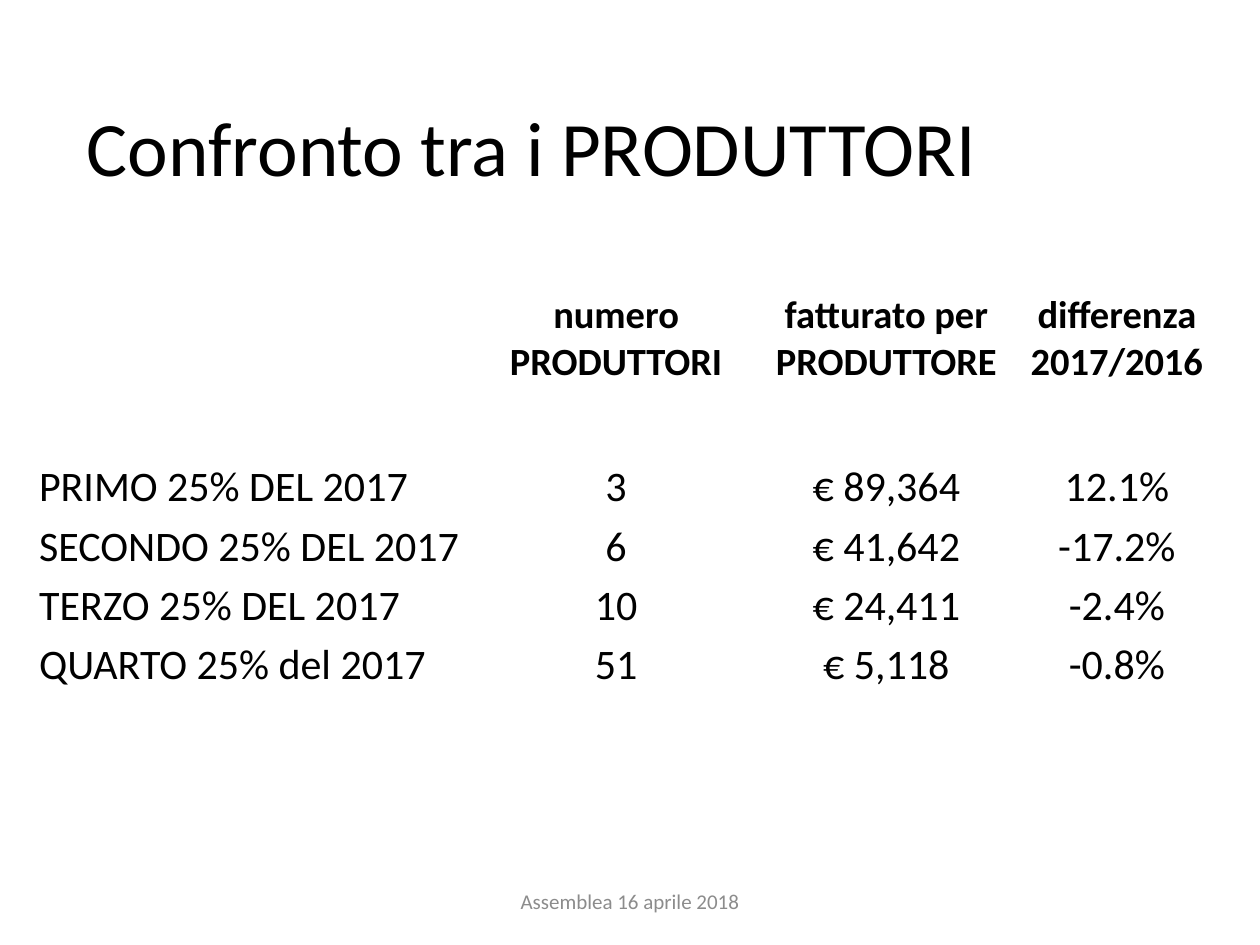
from pptx import Presentation
from pptx.dml.color import RGBColor
from pptx.enum.text import MSO_ANCHOR, PP_ALIGN
from pptx.util import Inches, Pt

LEFT, CENTER = PP_ALIGN.LEFT, PP_ALIGN.CENTER
MIDDLE = MSO_ANCHOR.MIDDLE
FONT = "Calibri"
BLACK, GREY = "000000", "8C8C8C"

COLUMN_WIDTHS = [3.58, 2.02, 2.27, 1.39]
HEADER_HEIGHT, ROW_HEIGHT = 1.89, 0.47
PRODUCERS = [
    ["", "numero PRODUTTORI", "fatturato per PRODUTTORE", "differenza 2017/2016"],
    ["PRIMO 25% DEL 2017", "3", "€ 89,364", "12.1%"],
    ["SECONDO 25% DEL 2017", "6", "€ 41,642", "-17.2%"],
    ["TERZO 25% DEL 2017", "10", "€ 24,411", "-2.4%"],
    ["QUARTO 25% del 2017", "51", "€ 5,118", "-0.8%"],
]


def rgb(color):
    return RGBColor.from_string(color)


def style_paragraph(paragraph, size, color=BLACK, align=LEFT, bold=False):
    paragraph.alignment = align
    font = paragraph.font
    font.name, font.size, font.bold = FONT, Pt(size), bold
    font.color.rgb = rgb(color)


def add_text(slide, text, left, top, width, height, size, color=BLACK, align=LEFT):
    frame = slide.shapes.add_textbox(
        Inches(left), Inches(top), Inches(width), Inches(height)).text_frame
    frame.word_wrap = True
    frame.vertical_anchor = MIDDLE
    paragraph = frame.paragraphs[0]
    paragraph.text = text
    style_paragraph(paragraph, size, color, align)
    return paragraph


def fill_cell(cell, text, is_header, align):
    cell.fill.background()
    cell.vertical_anchor = MIDDLE
    cell.margin_left = cell.margin_right = cell.margin_top = Inches(0.01)
    cell.margin_bottom = 0
    cell.text = text
    style_paragraph(cell.text_frame.paragraphs[0], 22 if is_header else 24,
                    align=align, bold=is_header)


def add_producer_table(slide, left, top):
    heights = [HEADER_HEIGHT] + [ROW_HEIGHT] * (len(PRODUCERS) - 1)
    table = slide.shapes.add_table(
        len(heights), len(COLUMN_WIDTHS), Inches(left), Inches(top),
        Inches(sum(COLUMN_WIDTHS)), Inches(sum(heights))).table
    table.first_row = table.horz_banding = False
    for column, width in zip(table.columns, COLUMN_WIDTHS):
        column.width = Inches(width)
    for r, (values, height) in enumerate(zip(PRODUCERS, heights)):
        table.rows[r].height = Inches(height)
        for c, value in enumerate(values):
            fill_cell(table.cell(r, c), value, r == 0, CENTER if c else LEFT)


def main():
    prs = Presentation()
    prs.slide_width, prs.slide_height = Inches(10), Inches(7.5)
    slide = prs.slides.add_slide(prs.slide_layouts[6])

    # Title
    title = add_text(slide, "Confronto tra i PRODUTTORI", 0.59, 0.66, 9.05, 1.09, 44)
    title.line_spacing = 0.9

    # Producers by quarter of turnover
    add_producer_table(slide, 0.3, 1.74)

    # Footer
    add_text(slide, "Assemblea 16 aprile 2018", 3.31, 6.95, 3.38, 0.4, 12, GREY, CENTER)

    prs.save("out.pptx")


if __name__ == "__main__":
    main()
